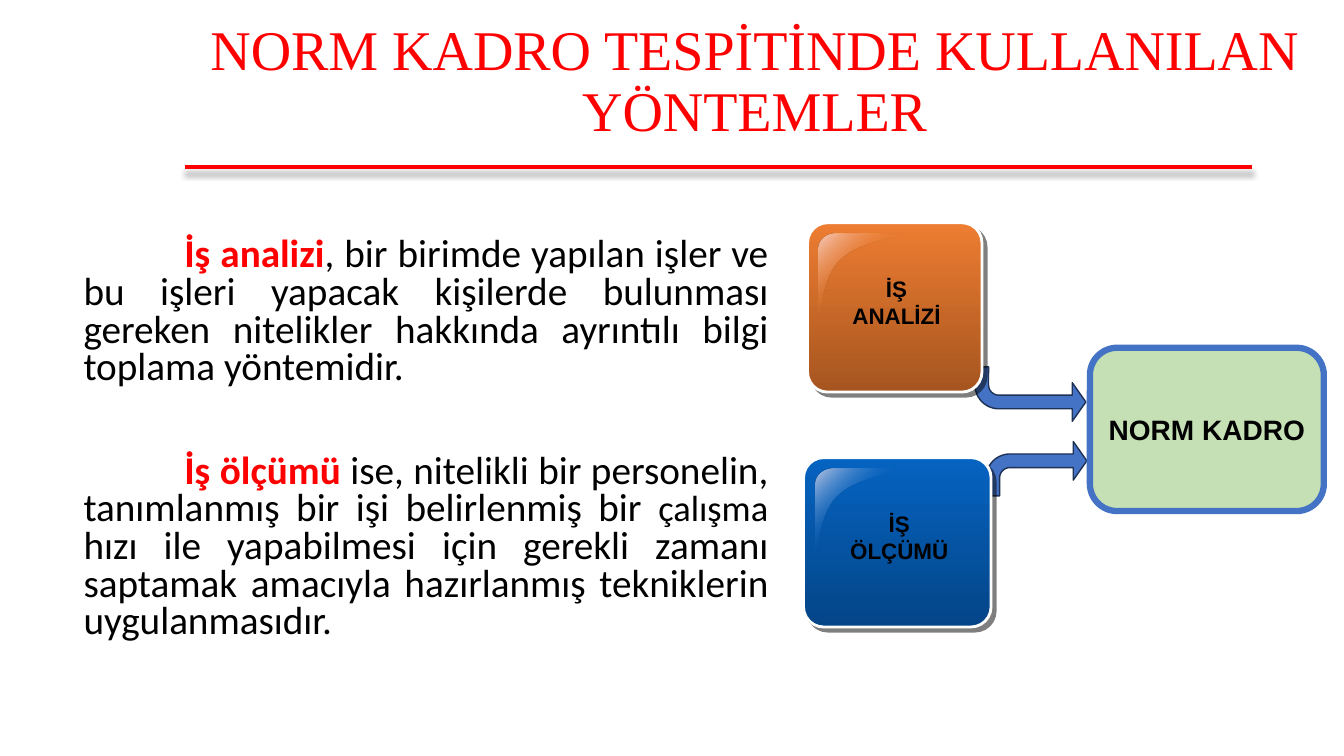
import pptx
import pptx.util
import pptx.dml.color
import pptx.enum.shapes
import pptx.enum.text
import pptx.oxml
import pptx.oxml.ns

WIDE, HIGH = 13.33, 7.5
KIND = pptx.enum.shapes.MSO_SHAPE
ALIGN = pptx.enum.text.PP_ALIGN
MID = pptx.enum.text.MSO_ANCHOR.MIDDLE
NAME = pptx.oxml.ns.qn
SPACE = 'xmlns:a="http://schemas.openxmlformats.org/drawingml/2006/main"'
PLAIN, RED, BLUE = "000000", "FF0000", "4472C4"
BODY = [
    [("İş analizi", RED, 28),
     (", bir birimde yapılan işler ve bu işleri yapacak kişilerde bulunması gereken "
      "nitelikler hakkında ayrıntılı bilgi toplama yöntemidir.", PLAIN, 28)],
    [("İş ölçümü ", RED, 28),
     ("ise, nitelikli bir personelin, tanımlanmış bir işi belirlenmiş bir ", PLAIN, 28),
     ("çalışma", PLAIN, 26),
     (" hızı ile yapabilmesi için gerekli zamanı saptamak amacıyla hazırlanmış "
      "tekniklerin uygulanmasıdır.", PLAIN, 28)],
]
TILES = [
    ((8.01, 2.21, 1.73, 1.68), "İŞ ANALİZİ", ("ED7D31", "A65520"), "F6CDC1"),
    ((7.97, 4.54, 1.86, 1.68), "İŞ ÖLÇÜMÜ", ("0563C1", "044587"), "BFC8E4"),
]
ARROWS = [((9.67, 3.64, 1.1, 0.54), True), ((9.78, 4.38, 1, 0.54), False)]
GLOSS = [
    [(0, 0.98), (0.05, 1), (0.02, 0.51), (0.27, 0.29)],
    [(0.27, 0.29), (0.52, 0.06), (1, 0.05), (0.99, 0)],
    [(0.2, 0), (0.09, 0), (0, 0.08), (0, 0.19)],
]


def tint(code):
    """Turn a hex string into a colour."""
    return pptx.dml.color.RGBColor.from_string(code)


def inch(box):
    """Turn lengths in inches into slide units."""
    return [pptx.util.Inches(n) for n in box]


def node(text):
    """Read one drawing element."""
    return pptx.oxml.parse_xml(text.replace(">", f" {SPACE}>", 1))


def shade(clear, blur, dist, turn):
    """Make a black outer shadow in an effect list."""
    return node(
        f'<a:effectLst><a:outerShdw blurRad="{int(blur * 12700)}" dist="{int(dist * 12700)}" '
        f'dir="{turn * 60000}" algn="tl" rotWithShape="0"><a:srgbClr val="000000">'
        f'<a:alpha val="{clear * 1000}"/></a:srgbClr></a:outerShdw></a:effectLst>')


def write(para, text, **form):
    """Add a run with the given font values."""
    run = para.add_run()
    run.text = text
    run.font.color.rgb = tint(form.pop("color", PLAIN))
    for key, value in form.items():
        setattr(run.font, key, value)
    return run


def paint(shape, fill=None, line=None, width=0):
    """Set the fill and line of a shape and drop its shadow."""
    if fill:
        shape.fill.solid()
        shape.fill.fore_color.rgb = tint(fill)
    if line:
        shape.line.color.rgb = tint(line)
        shape.line.width = pptx.util.Pt(width)
    else:
        shape.line.fill.background()
    shape.shadow.inherit = False


def blend(shape, stops, turn):
    """Fill a shape with a gradient of place, colour and opacity stops."""
    shape.fill.gradient()
    grad = shape._element.spPr.find(NAME("a:gradFill"))
    marks = "".join(
        f'<a:gs pos="{at * 1000}"><a:srgbClr val="{code}"><a:alpha val="{part * 1000}"/>'
        f'</a:srgbClr></a:gs>' for at, code, part in stops)
    for child in list(grad):
        grad.remove(child)
    grad.append(node(f"<a:gsLst>{marks}</a:gsLst>"))
    grad.append(node(f'<a:lin ang="{turn * 60000}" scaled="0"></a:lin>'))


def curve(ends, steps=12):
    """List the points of a cubic curve."""
    for step in range(steps + 1):
        t = step / steps
        parts = ((1 - t) ** 3, 3 * t * (1 - t) ** 2, 3 * t * t * (1 - t), t ** 3)
        yield tuple(sum(p * e[axis] for p, e in zip(parts, ends)) for axis in (0, 1))


def head(slide, box):
    """Place the title and the red rule below it."""
    title = slide.shapes.title
    left, top, wide, high = box
    for key, value in zip(("left", "top", "width", "height"), inch(box)):
        setattr(title, key, value)
    title.text_frame.vertical_anchor = MID
    para = title.text_frame.paragraphs[0]
    para.alignment, para.line_spacing = ALIGN.CENTER, 0.9
    write(para, "NORM KADRO TESPİTİNDE KULLANILAN YÖNTEMLER", color=RED,
          name="Times New Roman", size=pptx.util.Pt(40))
    low = top + high + 0.25
    rule = slide.shapes.add_connector(
        pptx.enum.shapes.MSO_CONNECTOR.STRAIGHT, *inch((left, low, left + 10.58, low)))
    rule.line.color.rgb = tint(RED)
    rule.line.width = pptx.util.Pt(3)
    rule._element.spPr.append(shade(25, 4, 4, 90))


def prose(slide, box):
    """Place the two justified paragraphs."""
    frame = slide.shapes.add_textbox(*inch(box)).text_frame
    frame.word_wrap = True
    for place, runs in enumerate(BODY):
        para = frame.add_paragraph() if place else frame.paragraphs[0]
        para.alignment, para.line_spacing = ALIGN.JUSTIFY, 0.8
        if place:
            para.space_before = pptx.util.Pt(47)
        para._p.get_or_add_pPr().set("indent", str(pptx.util.Inches(1)))
        for text, code, size in runs:
            write(para, text, color=code, bold=code == RED, name="Calibri",
                  size=pptx.util.Pt(size))


def bend(slide, box, flip):
    """Place one bent arrow."""
    arrow = slide.shapes.add_shape(KIND.BENT_ARROW, *inch(box))
    for place, value in enumerate((0.25, 0.355, 0.25, 0.438)):
        arrow.adjustments[place] = value
    paint(arrow, BLUE, "1E3256", 1)
    if flip:
        arrow._element.spPr.find(NAME("a:xfrm")).set("flipV", "1")


def tile(slide, box, text, tones, shine):
    """Place one glossy tile with its label."""
    left, top, wide, high = box
    base = slide.shapes.add_shape(KIND.ROUNDED_RECTANGLE, *inch(box))
    base.adjustments[0] = 0.119
    paint(base, None, "FFFFFF", 2)
    blend(base, [(0, tones[0], 100), (100, tones[1], 100)], 90)
    old = base._element.spPr.find(NAME("a:effectLst"))
    old.getparent().replace(old, shade(50, 0, 4.2, 45))

    spots = [inch((left + wide * (0.064 + x / 2), top + high * (0.065 + y / 2)))
             for ends in GLOSS for x, y in curve(ends)]
    path = slide.shapes.build_freeform(*spots[0])
    path.add_line_segments(spots[1:], close=True)
    gloss = path.convert_to_shape()
    paint(gloss)
    blend(gloss, [(0, shine, 100), (50, tones[0], 0), (100, shine, 100)], 45)

    label = slide.shapes.add_textbox(*inch(
        (left + wide * 0.16, top + high * 0.28, wide * 0.7, high * 0.38)))
    label.text_frame.word_wrap = True
    para = label.text_frame.paragraphs[0]
    para.alignment = ALIGN.CENTER
    run = write(para, text, name="Arial", bold=True, size=pptx.util.Pt(16))
    run.font._element.insert(1, shade(100, 0, 2, 45))


def goal(slide, box):
    """Place the green result box."""
    shape = slide.shapes.add_shape(KIND.ROUNDED_RECTANGLE, *inch(box))
    paint(shape, "C5E0B4", BLUE, 4.5)
    frame = shape.text_frame
    frame.word_wrap, frame.vertical_anchor = False, MID
    para = frame.paragraphs[0]
    para.alignment = ALIGN.CENTER
    write(para, "NORM KADRO", name="Arial", bold=True, size=pptx.util.Pt(20))


def main():
    """Build the slide and save it."""
    deck = pptx.Presentation()
    deck.slide_width, deck.slide_height = inch((WIDE, HIGH))
    slide = deck.slides.add_slide(deck.slide_layouts[5])
    head(slide, (1.84, 0.23, 11.29, 1.18))
    prose(slide, (0.73, 2.31, 6.99, 4.34))
    for box, flip in ARROWS:
        bend(slide, box, flip)
    for item in TILES:
        tile(slide, *item)
    goal(slide, (10.81, 3.45, 2.32, 1.62))
    deck.save("out.pptx")


if __name__ == "__main__":
    main()
